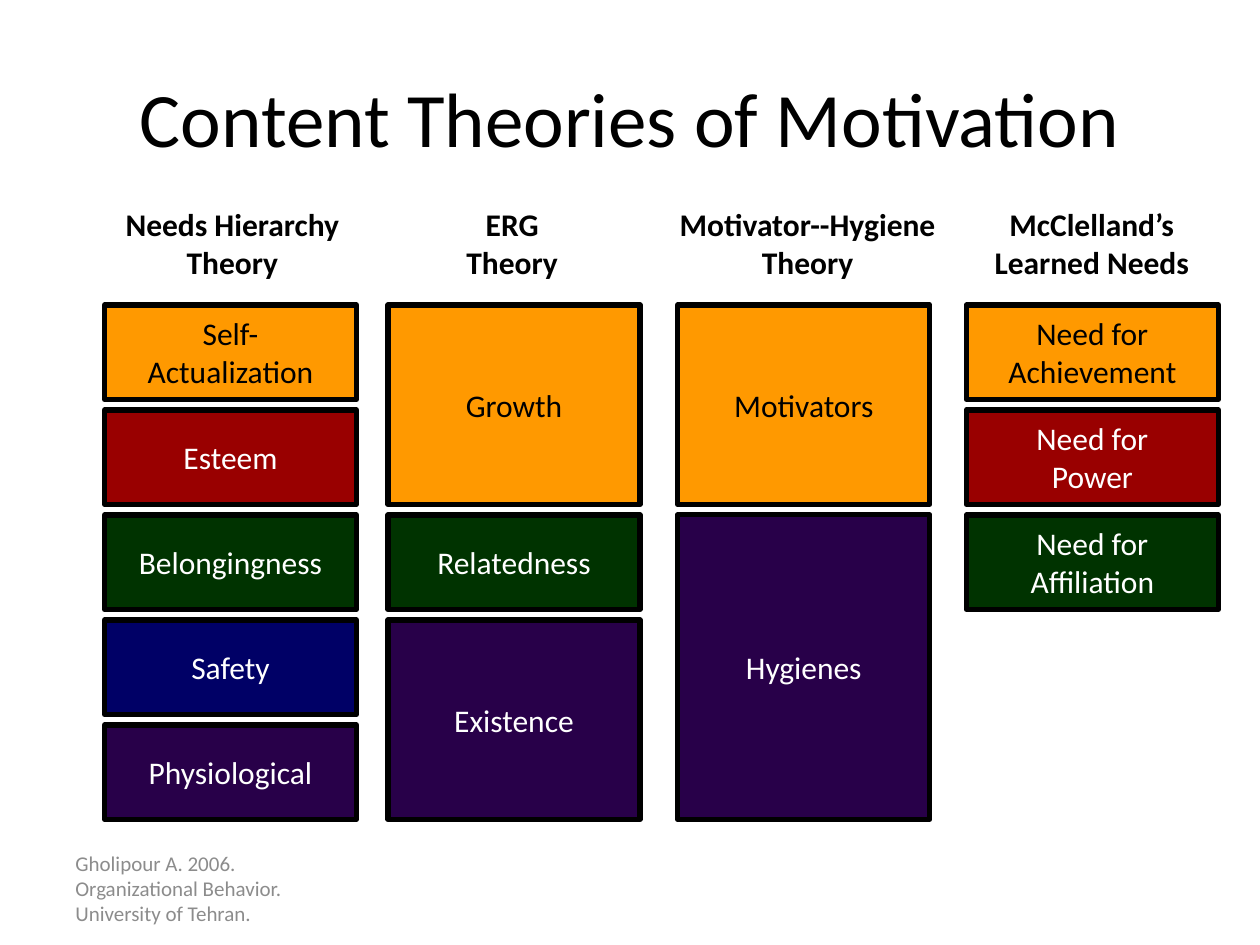
from dataclasses import dataclass

from pptx import Presentation
from pptx.dml.color import RGBColor
from pptx.enum.shapes import MSO_SHAPE as Shape
from pptx.enum.text import MSO_ANCHOR as Anchor, PP_ALIGN as Align
from pptx.util import Inches, Pt

FONT = "Calibri"
BLACK, WHITE, GREY = "000000", "FFFFFF", "8C8C8C"
ORANGE, RED, GREEN = "FF9900", "990000", "003300"
NAVY, PURPLE = "000066", "280049"

GRID_TOP = 2.42
BOX_WIDTH = 2
BOX_HEIGHT = 0.75
ROW_PITCH = 5 / 6
HEADING_TOP = 1.58
HEADING_HEIGHT = 0.7


@dataclass
class Need:
    label: str
    fill: str
    rows: int = 1


@dataclass
class Theory:
    heading: str
    heading_left: float
    heading_width: float
    left: float
    needs: list[Need]


THEORIES = [
    Theory("Needs Hierarchy\vTheory", 0.76, 2.17, 0.83, [
        Need("Self-\nActualization", ORANGE),
        Need("Esteem", RED),
        Need("Belongingness", GREEN),
        Need("Safety", NAVY),
        Need("Physiological", PURPLE),
    ]),
    Theory("ERG\vTheory", 3.55, 1.03, 3.08, [
        Need("Growth", ORANGE, 2),
        Need("Relatedness", GREEN),
        Need("Existence", PURPLE, 2),
    ]),
    Theory("Motivator--Hygiene\nTheory", 5.18, 2.46, 5.38, [
        Need("Motivators", ORANGE, 2),
        Need("Hygienes", PURPLE, 3),
    ]),
    Theory("McClelland’s\nLearned Needs", 7.67, 1.99, 7.67, [
        Need("Need for\nAchievement", ORANGE),
        Need("Need for\nPower", RED),
        Need("Need for\nAffiliation", GREEN),
    ]),
]


def rgb(value: str) -> RGBColor:
    return RGBColor.from_string(value)


def set_text(sp, text: str, size: float, color: str, bold: bool = False,
             align=Align.CENTER, anchor=Anchor.MIDDLE, wrap: bool = False) -> None:
    tf = sp.text_frame
    tf.text = text
    tf.word_wrap = wrap
    tf.vertical_anchor = anchor
    for p in tf.paragraphs:
        p.alignment = align
        for r in p.runs:
            r.font.name = FONT
            r.font.size = Pt(size)
            r.font.bold = bold
            r.font.color.rgb = rgb(color)


def add_text(s, left: float, top: float, width: float, height: float,
             text: str, size: float, color: str, **style) -> None:
    sp = s.shapes.add_textbox(Inches(left), Inches(top), Inches(width), Inches(height))
    set_text(sp, text, size, color, **style)


def add_need(s, need: Need, left: float, row: int) -> None:
    height = BOX_HEIGHT + (need.rows - 1) * ROW_PITCH
    sp = s.shapes.add_shape(Shape.RECTANGLE, Inches(left), Inches(GRID_TOP + row * ROW_PITCH),
                            Inches(BOX_WIDTH), Inches(height))
    sp.shadow.inherit = False
    sp.fill.solid()
    sp.fill.fore_color.rgb = rgb(need.fill)
    sp.line.color.rgb = rgb(BLACK)
    sp.line.width = Pt(3)
    set_text(sp, need.label, 18, BLACK if need.fill == ORANGE else WHITE)


def add_theory(s, theory: Theory) -> None:
    add_text(s, theory.heading_left, HEADING_TOP, theory.heading_width, HEADING_HEIGHT,
             theory.heading, 18, BLACK, bold=True, anchor=Anchor.TOP)
    row = 0
    for need in theory.needs:
        add_need(s, need, theory.left, row)
        row += need.rows


def main() -> None:
    prs = Presentation()
    prs.slide_width, prs.slide_height = Inches(10), Inches(7.5)
    s = prs.slides.add_slide(prs.slide_layouts[6])
    add_text(s, 0.5, 0.3, 9, 1.25, "Content Theories of Motivation", 44, BLACK, wrap=True)
    for theory in THEORIES:
        add_theory(s, theory)
    add_text(s, 0.5, 6.85, 2.33, 0.4,
             "Gholipour A. 2006. Organizational Behavior. University of Tehran.",
             12, GREY, align=Align.LEFT, wrap=True)
    prs.save("out.pptx")


if __name__ == "__main__":
    main()
